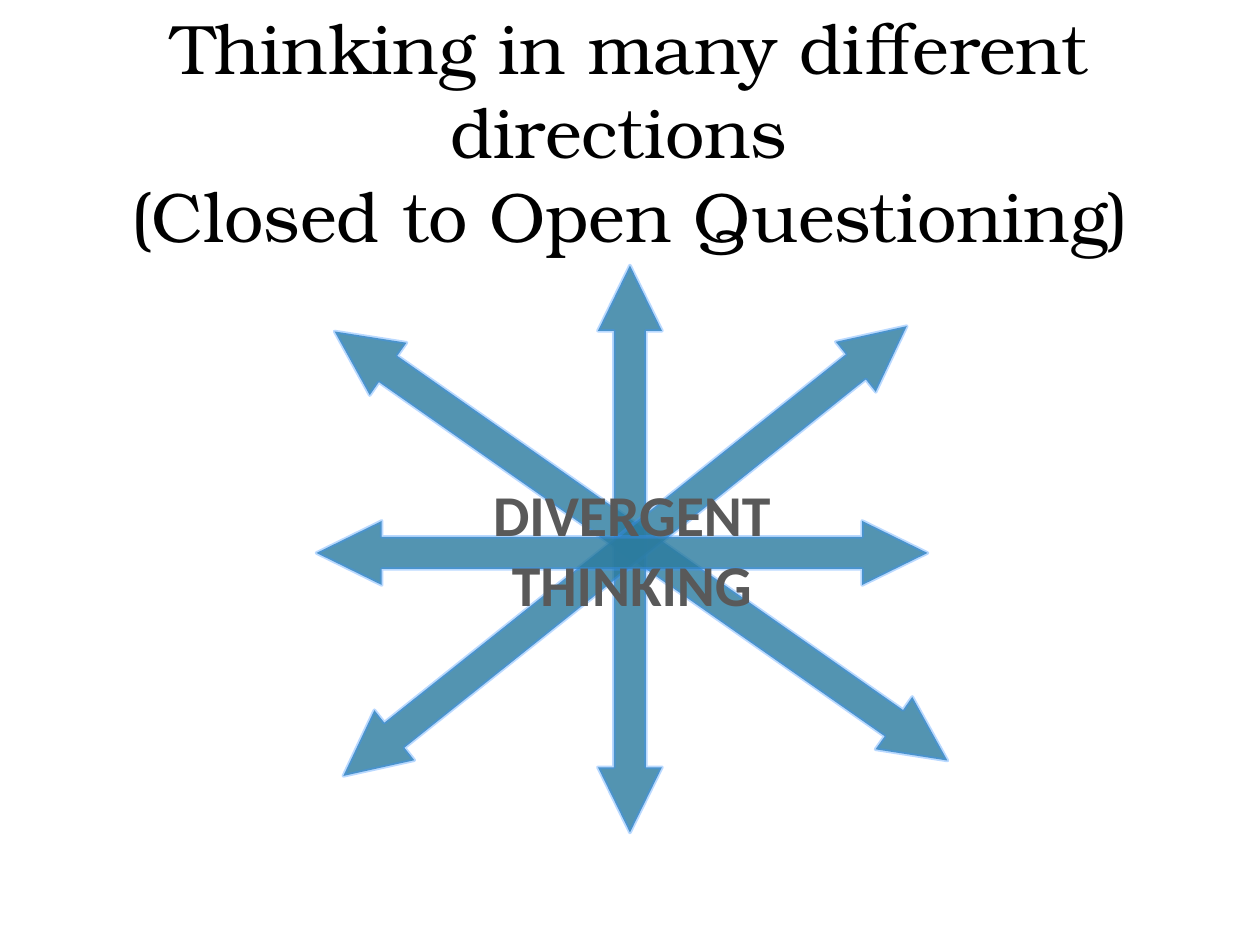
from typing import NamedTuple

from lxml.etree import SubElement
from pptx import Presentation
from pptx.dml.color import RGBColor
from pptx.enum.shapes import MSO_SHAPE
from pptx.enum.text import MSO_ANCHOR, MSO_AUTO_SIZE, PP_ALIGN
from pptx.oxml.ns import qn
from pptx.util import Emu, Pt

PX = 914400 / 126
COLORS = {"arrow": "2C7C9F", "edge": "3A93FF", "center": "595959", "title": "000000"}
ARROW_THICKNESS = 64
TITLE_ONLY = 5


class Arrow(NamedTuple):
    center_x: int
    center_y: int
    length: int
    angle: float


class TextStyle(NamedTuple):
    font: str
    size: int
    color: str
    bold: bool
    anchor: MSO_ANCHOR


ARROWS = [
    Arrow(641, 546, 748, 215),
    Arrow(630, 549, 567, 270),
    Arrow(625, 551, 721, 141.4),
    Arrow(622, 553, 611, 0),
]
TITLE_STYLE = TextStyle("TeX Gyre Bonum", 40, "title", False, MSO_ANCHOR.MIDDLE)
CENTER_STYLE = TextStyle("Calibri", 33, "center", True, MSO_ANCHOR.BOTTOM)


def px(length: float) -> Emu:
    return Emu(round(length * PX))


def paint(fill, color: str, opacity: int) -> None:
    """Apply a solid colour with an opacity in percent."""
    fill.solid()
    fill.fore_color.rgb = RGBColor.from_string(COLORS[color])
    for srgb in fill._xPr.iter(qn("a:solidFill")):
        SubElement(srgb[0], qn("a:alpha"), val=str(opacity * 1000))
        break


def draw_arrow(shapes, arrow: Arrow) -> None:
    shape = shapes.add_shape(
        MSO_SHAPE.LEFT_RIGHT_ARROW,
        px(arrow.center_x - arrow.length / 2),
        px(arrow.center_y - ARROW_THICKNESS / 2),
        px(arrow.length),
        px(ARROW_THICKNESS),
    )
    shape.rotation = arrow.angle
    shape.adjustments[0] = 0.5
    shape.adjustments[1] = 1.02
    shape.shadow.inherit = False
    paint(shape.fill, "arrow", 81)
    shape.line.width = Pt(2)
    paint(shape.line.fill, "edge", 34)


def write_lines(frame, lines: list[str], style: TextStyle) -> None:
    """Write centred lines, parted by line breaks, in one paragraph."""
    frame.word_wrap = True
    frame.auto_size = MSO_AUTO_SIZE.NONE
    frame.vertical_anchor = style.anchor
    paragraph = frame.paragraphs[0]
    paragraph.alignment = PP_ALIGN.CENTER
    for number, line in enumerate(lines):
        if number:
            paragraph.add_line_break()
        run = paragraph.add_run()
        run.text = line
        run.font.name = style.font
        run.font.size = Pt(style.size)
        run.font.bold = style.bold
        run.font.color.rgb = RGBColor.from_string(COLORS[style.color])


def main() -> None:
    deck = Presentation()
    deck.slide_width, deck.slide_height = px(1260), px(945)
    slide = deck.slides.add_slide(deck.slide_layouts[TITLE_ONLY])

    title = slide.shapes.title
    title.left, title.top, title.width, title.height = px(0), px(20), px(1260), px(221)
    write_lines(
        title.text_frame,
        ["Thinking in many different directions ", "(Closed to Open Questioning)"],
        TITLE_STYLE,
    )

    star = slide.shapes.add_group_shape()
    for arrow in ARROWS:
        draw_arrow(star.shapes, arrow)
    center = star.shapes.add_textbox(px(330), px(435), px(604), px(189))
    write_lines(center.text_frame, ["DIVERGENT", "THINKING"], CENTER_STYLE)

    deck.save("out.pptx")


if __name__ == "__main__":
    main()
